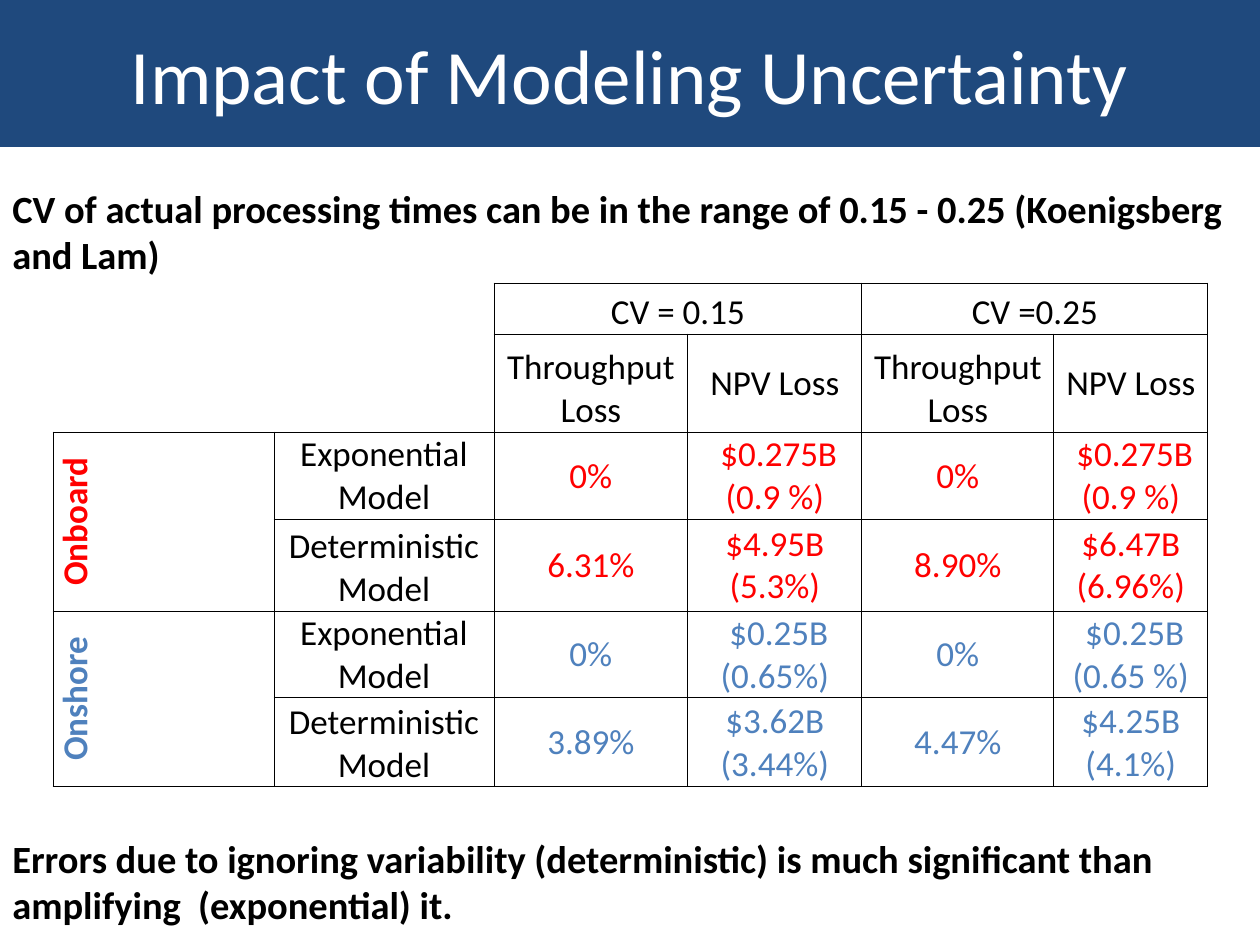
from lxml import etree
from pptx import Presentation
from pptx.dml.color import RGBColor
from pptx.enum.shapes import MSO_SHAPE
from pptx.enum.text import MSO_ANCHOR as ANCHOR, PP_ALIGN as ALIGN
from pptx.oxml.ns import qn
from pptx.util import Pt

COLORS = {"navy": "1F497D", "white": "FFFFFF", "black": "000000",
          "red": "FF0000", "blue": "4F81BD"}
FONT = "Calibri"

TITLE = "Impact of Modeling Uncertainty"
NOTES = [
    (179, "CV of actual processing times can be in the range of 0.15 - 0.25 (Koenigsberg and Lam)"),
    (829, "Errors due to ignoring variability (deterministic) is much significant than amplifying  (exponential) it."),
]
LOSSES = ["Throughput Loss", "NPV Loss"]
ROWS = [
    ["", "", "CV = 0.15", "", "CV =0.25", ""],
    ["", ""] + LOSSES * 2,
    ["Onboard", "Exponential Model", "0%", " $0.275B (0.9 %)", "0%", " $0.275B (0.9 %)"],
    ["", "Deterministic Model", "6.31%", "$4.95B (5.3%)", "8.90%", "$6.47B (6.96%)"],
    ["Onshore", "Exponential Model", "0%", " $0.25B (0.65%)", "0%", " $0.25B (0.65 %)"],
    ["", "Deterministic Model", "3.89%", "$3.62B (3.44%)", "4.47%", "$4.25B (4.1%)"],
]
GROUP_COLORS = ["black", "red", "blue"]
MERGES = [((0, 2), (0, 3)), ((0, 4), (0, 5)), ((2, 0), (3, 0)), ((4, 0), (5, 0))]
HEAD = 2
COL_W = [221, 220, 194, 174, 192, 154]
ROW_H = [39, 98, 87, 92, 85, 89]


def px(n):
    return round(n * 914400 / 126)


def rgb(name):
    return RGBColor.from_string(COLORS[name])


def write(tf, text, size=20, color="black", bold=False, align=ALIGN.CENTER):
    tf.word_wrap = True
    p = tf.paragraphs[0]
    p.alignment = align
    r = p.add_run()
    r.text = text
    r.font.name, r.font.size, r.font.bold = FONT, Pt(size), bold
    r.font.color.rgb = rgb(color)


def set_borders(cell, sides):
    tcPr = cell._tc.get_or_add_tcPr()
    for side in "LRTB":
        ln = etree.SubElement(tcPr, qn(f"a:ln{side}"), w=str(Pt(0.5)))
        if side in sides:
            fill = etree.SubElement(ln, qn("a:solidFill"))
            etree.SubElement(fill, qn("a:srgbClr"), val=COLORS["black"])
        else:
            etree.SubElement(ln, qn("a:noFill"))
    cell.fill.background()


def format_cell(cell, text, row, col):
    empty_corner = row < HEAD and col < HEAD
    sides = "LRTB"
    if empty_corner:
        sides = ("R" if col == HEAD - 1 else "") + ("B" if row == HEAD - 1 else "")
    set_borders(cell, sides)
    if not text:
        return
    cell.margin_left = cell.margin_right = cell.margin_top = px(1)
    cell.margin_bottom = 0
    low = row == 0 or col == 1 or text == LOSSES[0]
    cell.vertical_anchor = ANCHOR.BOTTOM if low else ANCHOR.MIDDLE
    if col == 0:
        cell._tc.get_or_add_tcPr().set("vert", "vert270")
    color = "black" if col == 1 else GROUP_COLORS[row // 2]
    write(cell.text_frame, text, color=color, bold=col == 0)


def add_title(s):
    sp = s.shapes.add_shape(MSO_SHAPE.RECTANGLE, 0, 0, px(1260), px(147))
    sp.shadow.inherit = False
    sp.fill.solid()
    sp.fill.fore_color.rgb = rgb("navy")
    sp.line.fill.background()
    sp.text_frame.vertical_anchor = ANCHOR.MIDDLE
    write(sp.text_frame, TITLE, size=44, color="white")


def add_table(s):
    frame = s.shapes.add_table(len(ROWS), len(COL_W), px(53), px(283),
                               px(sum(COL_W)), px(sum(ROW_H)))
    table = frame.table
    table.first_row = table.horz_banding = False
    for column, w in zip(table.columns, COL_W):
        column.width = px(w)
    for row, h in zip(table.rows, ROW_H):
        row.height = px(h)
    for start, end in MERGES:
        table.cell(*start).merge(table.cell(*end))
    for i, texts in enumerate(ROWS):
        for j, text in enumerate(texts):
            format_cell(table.cell(i, j), text, i, j)


def main():
    prs = Presentation()
    prs.slide_width, prs.slide_height = px(1260), px(945)
    s = prs.slides.add_slide(prs.slide_layouts[6])
    add_title(s)
    add_table(s)
    for top, text in NOTES:
        box = s.shapes.add_textbox(0, px(top), px(1260), px(106))
        write(box.text_frame, text, size=22, bold=True, align=ALIGN.LEFT)
    prs.save("out.pptx")


if __name__ == "__main__":
    main()
